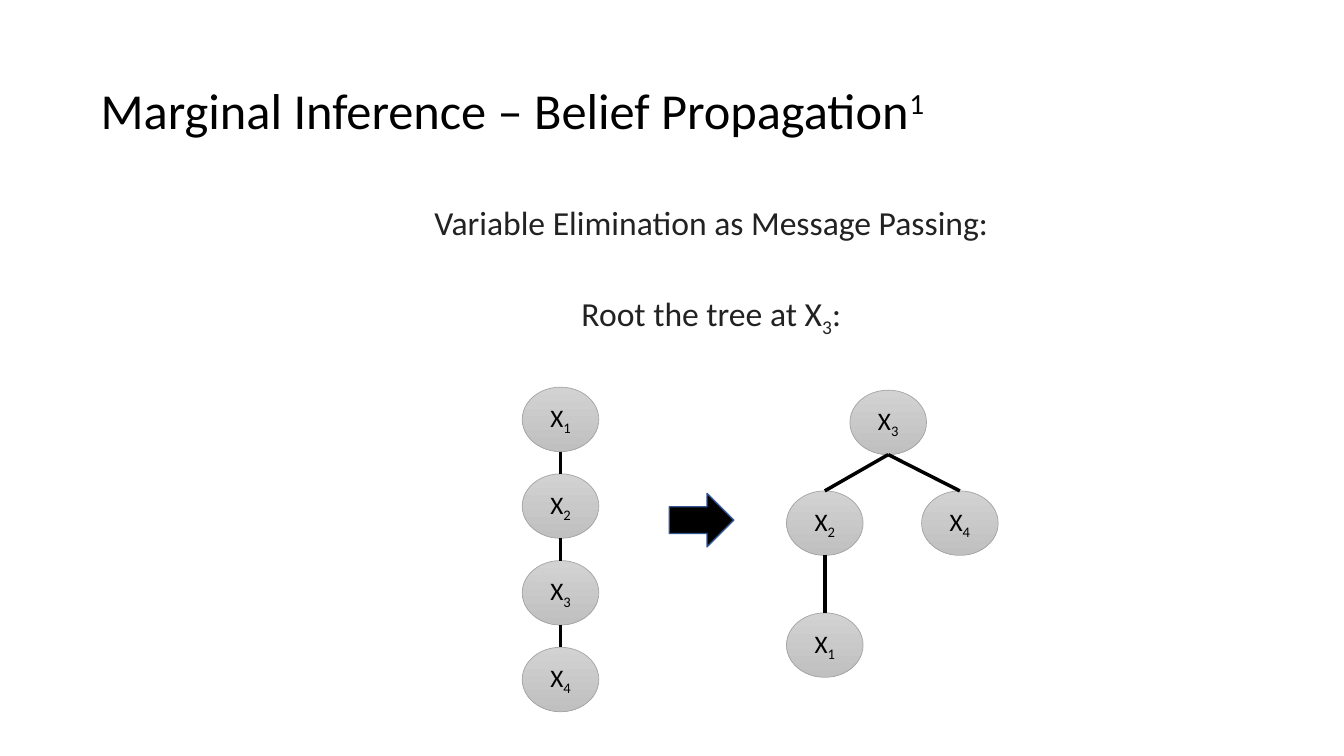
"""Build the belief propagation slide: a chain re-rooted as a tree."""
from lxml import etree
from pptx import Presentation
from pptx.dml.color import RGBColor
from pptx.enum.shapes import MSO_CONNECTOR, MSO_SHAPE
from pptx.enum.text import MSO_ANCHOR, PP_ALIGN
from pptx.oxml.ns import qn
from pptx.util import Inches, Pt

OVAL, ARROW = MSO_SHAPE.OVAL, MSO_SHAPE.DOWN_ARROW
STRAIGHT = MSO_CONNECTOR.STRAIGHT
TOP, MIDDLE = MSO_ANCHOR.TOP, MSO_ANCHOR.MIDDLE
LEFT, CENTER = PP_ALIGN.LEFT, PP_ALIGN.CENTER

BLACK = RGBColor(0x00, 0x00, 0x00)
INK = RGBColor(0x22, 0x22, 0x22)
NODE_LIGHT = RGBColor(0xD2, 0xD2, 0xD2)
NODE_DARK = RGBColor(0xC0, 0xC0, 0xC0)
NODE_EDGE = RGBColor(0xA5, 0xA5, 0xA5)
ARROW_EDGE = RGBColor(0x32, 0x54, 0x91)

WIDTH, HEIGHT = Inches(13.33), Inches(7.5)
NODE_W, NODE_H = 5.7, 8.53
SUPER, SUB = 30000, -25000

TITLE_FONT = {"name": "Calibri", "size": Pt(36)}
BODY_FONT = {"name": "Calibri", "size": Pt(24)}
NODE_FONT = {"name": "Calibri", "size": Pt(18)}

CHAIN_X, CHAIN_TOP, CHAIN_STEP = 41.71, 55.47, 11.47
CHAIN = {n: (CHAIN_X, CHAIN_TOP + i * CHAIN_STEP) for i, n in enumerate("1234")}
TREE = {"3": (66.09, 55.87), "2": (61.37, 69.2),
        "4": (71.42, 69.2), "1": (61.37, 85.33)}
CHAIN_EDGES = ["12", "23", "34"]
TREE_EDGES = ["32", "34", "21"]


def across(share):
    """Turn a percentage of the slide width into a length."""
    return int(WIDTH * share / 100)


def down(share):
    """Turn a percentage of the slide height into a length."""
    return int(HEIGHT * share / 100)


def apply(target, values):
    """Set each named attribute on the target."""
    for name, value in values.items():
        setattr(target, name, value)


def write(p, pieces, font, color, layout):
    """Fill a paragraph with (text, baseline) pieces."""
    apply(p, layout)
    for text, baseline in pieces:
        r = p.add_run()
        r.text = text
        apply(r.font, font)
        r.font.color.rgb = color
        if baseline:
            r._r.get_or_add_rPr().set("baseline", str(baseline))


def add_text(s, box, anchor):
    """Add a wrapping text box placed by shares and return its frame."""
    x, y, w, h = box
    tf = s.shapes.add_textbox(across(x), down(y), across(w), down(h)).text_frame
    apply(tf, {"word_wrap": True, "vertical_anchor": anchor})
    return tf


def add_shape(s, kind, center, size, edge, edge_width):
    """Add a preset shape around a centre, with its outline set."""
    (x, y), (w, h) = center, size
    sp = s.shapes.add_shape(kind, across(x - w / 2), down(y - h / 2),
                            across(w), down(h))
    sp.shadow.inherit = False
    sp.line.color.rgb = edge
    sp.line.width = Pt(edge_width)
    return sp


def add_node(s, index, center):
    """Add a shaded variable node with a subscript."""
    sp = add_shape(s, OVAL, center, (NODE_W, NODE_H), NODE_EDGE, 0.5)
    sp.fill.gradient()
    sp.fill.gradient_angle = 270
    for stop, color in zip(sp.fill.gradient_stops, (NODE_LIGHT, NODE_DARK)):
        stop.color.rgb = color
    tf = sp.text_frame
    apply(tf, {"word_wrap": False, "vertical_anchor": MIDDLE})
    write(tf.paragraphs[0], [("X", 0), (index, SUB)], NODE_FONT, BLACK,
          {"alignment": CENTER})


def add_edge(s, parent, child):
    """Join the bottom of one node to the top of another."""
    (x1, y1), (x2, y2) = parent, child
    line = s.shapes.add_connector(
        STRAIGHT, across(x1), down(y1 + NODE_H / 2),
        across(x2), down(y2 - NODE_H / 2))
    line.line.color.rgb = BLACK
    line.line.width = Pt(2.5)
    etree.SubElement(line._element.spPr, qn("a:effectLst"))


def add_graph(s, nodes, edges):
    """Draw all nodes of a graph and then its edges."""
    for index, center in nodes.items():
        add_node(s, index, center)
    for parent, child in edges:
        add_edge(s, nodes[parent], nodes[child])


def add_arrow(s):
    """Add the block arrow that leads from the chain to the tree."""
    sp = add_shape(s, ARROW, (52.2, 68.8), (3.98, 8.53), ARROW_EDGE, 1)
    sp.rotation = 270
    sp.fill.solid()
    sp.fill.fore_color.rgb = BLACK


def add_body(s):
    """Add the two centred statements above the graphs."""
    tf = add_text(s, (6.9, 26.67, 88.3, 60.4), TOP)
    lines = [([("Variable Elimination as Message Passing:", 0)], 5),
             ([("Root the tree at X", 0), ("3", SUB), (":", 0)], 36)]
    for i, (pieces, gap) in enumerate(lines):
        p = tf.add_paragraph() if i else tf.paragraphs[0]
        write(p, pieces, BODY_FONT, INK,
              {"alignment": CENTER, "line_spacing": 0.9, "space_before": Pt(gap)})
        p._p.get_or_add_pPr().set("marL", str(Inches(0.5)))


def main():
    """Build and save the slide."""
    prs = Presentation()
    apply(prs, {"slide_width": WIDTH, "slide_height": HEIGHT})
    s = prs.slides.add_slide(prs.slide_layouts[6])
    title = add_text(s, (6.75, 5.33, 86.27, 19.33), MIDDLE)
    write(title.paragraphs[0],
          [("Marginal Inference – Belief Propagation", 0), ("1", SUPER)],
          TITLE_FONT, BLACK, {"alignment": LEFT, "line_spacing": 0.9})
    add_body(s)
    add_graph(s, TREE, TREE_EDGES)
    add_graph(s, CHAIN, CHAIN_EDGES)
    add_arrow(s)
    prs.save("out.pptx")


if __name__ == "__main__":
    main()
